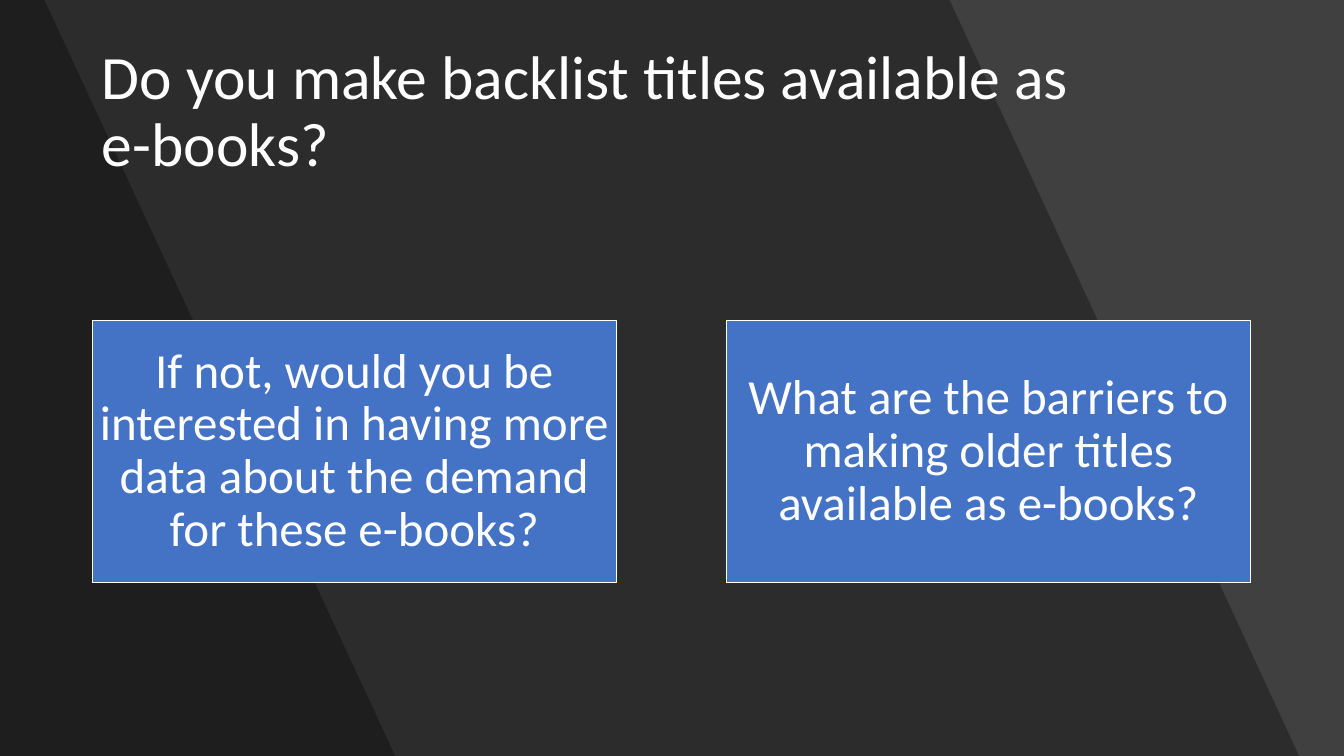
from lxml import etree
from pptx import Presentation
from pptx.dml.color import RGBColor
from pptx.enum.shapes import MSO_SHAPE
from pptx.enum.text import MSO_ANCHOR, PP_ALIGN
from pptx.oxml.ns import qn
from pptx.util import Cm, Pt

RECT = MSO_SHAPE.RECTANGLE
MIDDLE = MSO_ANCHOR.MIDDLE
LEFT, CENTER = PP_ALIGN.LEFT, PP_ALIGN.CENTER

WIDTH, HEIGHT = 33.87, 19.05
FONT = "Calibri"
WHITE, BLACK, GRAY, BLUE = "FFFFFF", "000000", "404040", "4472C4"

TITLE = ["Do you make backlist titles available as ", "e-books?"]
CARDS = [
    "If not, would you be interested in having more data about the demand "
    "for these e-books?",
    "What are the barriers to making older titles available as e-books?",
]
CARD_LEFT, CARD_TOP, CARD_STEP = 2.33, 8.08, 15.98
CARD_WIDTH, CARD_HEIGHT = 13.21, 6.6


def paint(fill, color):
    fill.solid()
    fill.fore_color.rgb = RGBColor.from_string(color)


def add_band(slide, top, bottom):
    """Shade the slide from its left edge to a slant from top to bottom."""
    path = slide.shapes.build_freeform(0, 0)
    path.add_line_segments(
        [(Cm(top), 0), (Cm(bottom), Cm(HEIGHT)), (0, Cm(HEIGHT))], close=True
    )
    band = path.convert_to_shape()
    band.shadow.inherit = False
    band.line.fill.background()
    paint(band.fill, BLACK)
    color = band.fill._xPr.find(qn("a:solidFill"))[0]
    etree.SubElement(color, qn("a:alpha"), val="30000")


def write(frame, lines, size, align):
    frame.word_wrap = True
    frame.vertical_anchor = MIDDLE
    para = frame.paragraphs[0]
    para.alignment = align
    para.line_spacing = 0.9
    for i, line in enumerate(lines):
        if i:
            para.add_line_break()
        run = para.add_run()
        run.text = line
        run.font.name = FONT
        run.font.size = Pt(size)
        run.font.color.rgb = RGBColor.from_string(WHITE)


def add_title(slide, lines):
    box = slide.shapes.add_textbox(Cm(2.32), Cm(1.01), Cm(29.23), Cm(3.68))
    write(box.text_frame, lines, 44, LEFT)


def add_card(slide, left, text):
    card = slide.shapes.add_shape(
        RECT, Cm(left), Cm(CARD_TOP), Cm(CARD_WIDTH), Cm(CARD_HEIGHT)
    )
    card.shadow.inherit = False
    paint(card.fill, BLUE)
    paint(card.line.fill, WHITE)
    card.line.width = Pt(1)
    frame = card.text_frame
    frame.margin_left = frame.margin_right = Cm(0.05)
    frame.margin_top = frame.margin_bottom = Cm(0.05)
    write(frame, [text], 35, CENTER)


def main():
    deck = Presentation()
    deck.slide_width, deck.slide_height = Cm(WIDTH), Cm(HEIGHT)
    slide = deck.slides.add_slide(deck.slide_layouts[6])
    paint(slide.background.fill, GRAY)
    add_band(slide, 23.93, 32.74)
    add_band(slide, 1.12, 9.96)
    add_title(slide, TITLE)
    for i, text in enumerate(CARDS):
        add_card(slide, CARD_LEFT + i * CARD_STEP, text)
    deck.save("out.pptx")


if __name__ == "__main__":
    main()
